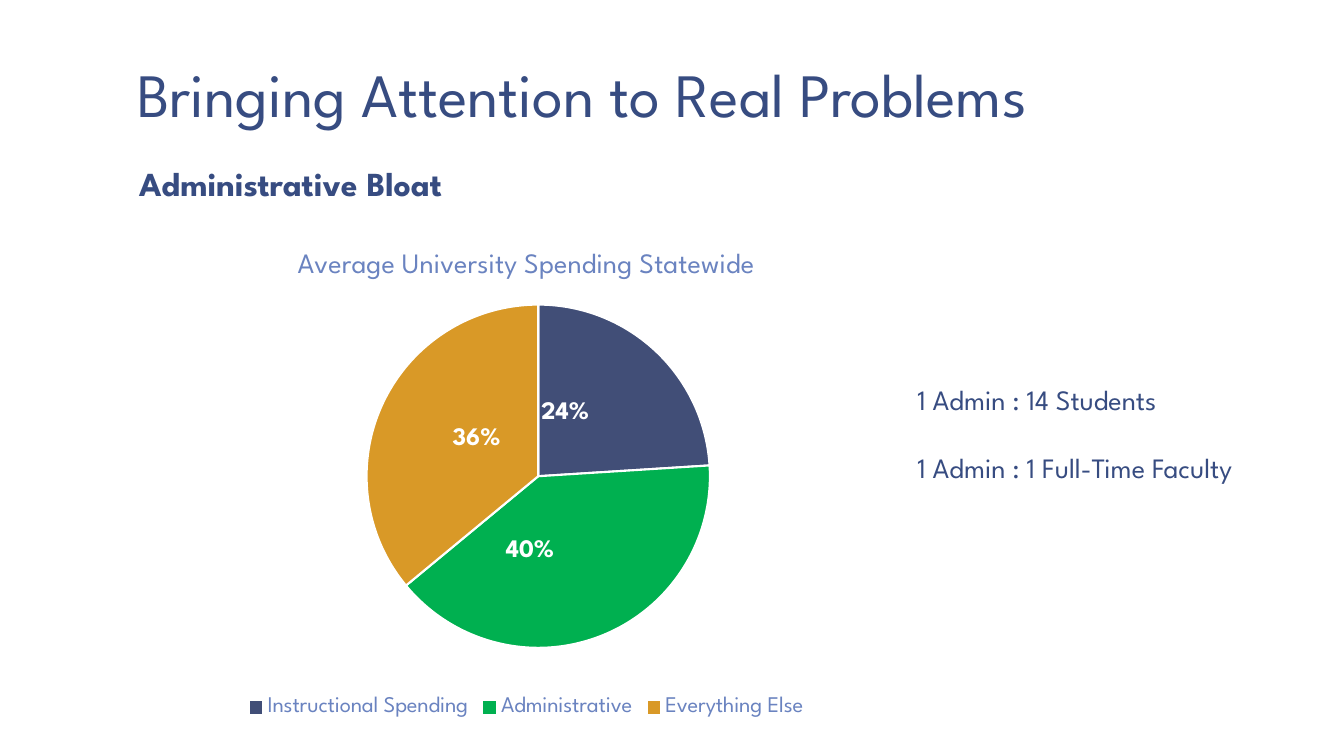
from lxml.etree import SubElement
from pptx import Presentation
from pptx.chart.data import CategoryChartData
from pptx.dml.color import RGBColor
from pptx.enum.chart import XL_CHART_TYPE, XL_LABEL_POSITION, XL_LEGEND_POSITION
from pptx.enum.text import MSO_ANCHOR, PP_ALIGN
from pptx.oxml.ns import qn
from pptx.util import Inches, Pt

FONT = "League Spartan"
COLORS = {"navy": "374C81", "soft_blue": "6A83C0", "white": "FFFFFF"}

# Category, share, slice colour, label shift as a fraction of the chart
SPENDING = [
    ("Instructional Spending", 0.24, "414E77", (-0.04, 0)),
    ("Administrative", 0.40, "00B050", (-0.05, -0.01)),
    ("Everything Else", 0.36, "D99927", (0.02, 0)),
]
RATIOS = ["1 Admin : 14 Students", "1 Admin : 1 Full-Time Faculty"]


def rgb(name):
    return RGBColor.from_string(COLORS.get(name, name))


def style(font, size, color, bold=False):
    font.name, font.size, font.bold = FONT, Pt(size), bold
    font.color.rgb = rgb(color)


def set_margins(frame):
    frame.word_wrap = True
    frame.vertical_anchor = MSO_ANCHOR.BOTTOM
    frame.margin_left = frame.margin_right = Inches(0.13)
    frame.margin_top = frame.margin_bottom = Inches(0.07)


def add_title(slide, left, top, width, height):
    title = slide.shapes.title
    title.left, title.top, title.width, title.height = left, top, width, height
    set_margins(title.text_frame)
    title.text_frame.text = "Bringing Attention to Real Problems"
    heading = title.text_frame.paragraphs[0]
    heading.alignment, heading.line_spacing = PP_ALIGN.LEFT, 0.85
    style(heading.font, 44, "navy")


def add_subtitle(slide, left, top, width, height):
    frame = slide.shapes.add_textbox(left, top, width, height).text_frame
    set_margins(frame)
    frame.text = "Administrative Bloat"
    subtitle = frame.paragraphs[0]
    subtitle.line_spacing = 0.95
    style(subtitle.font, 24, "navy", bold=True)


def add_layout(layout, **values):
    manual = SubElement(layout, qn("c:manualLayout"))
    for tag, value in values.items():
        SubElement(manual, qn(f"c:{tag}")).set("val", str(value))


def add_spending_pie(slide, left, top, width, height):
    data = CategoryChartData(number_format="0%")
    data.categories = [category for category, *_ in SPENDING]
    data.add_series("Series 1", [share for _, share, *_ in SPENDING])
    chart = slide.shapes.add_chart(
        XL_CHART_TYPE.PIE, left, top, width, height, data).chart
    style(chart.font, 10, "navy")

    # Title and legend
    chart.has_title = True
    chart.chart_title.include_in_layout = False
    chart.chart_title.text_frame.text = "Average University Spending Statewide"
    style(chart.chart_title.text_frame.paragraphs[0].font, 20, "soft_blue")
    chart.has_legend = True
    chart.legend.position = XL_LEGEND_POSITION.BOTTOM
    chart.legend.include_in_layout = False
    style(chart.legend.font, 16, "soft_blue")

    # Plot area
    plot = chart.plots[0]
    plot.vary_by_categories = True
    plot_area = chart.element.find(f".//{qn('c:plotArea')}")
    layout = plot_area.find(qn("c:layout"))
    if layout is None:
        layout = SubElement(plot_area, qn("c:layout"))
        plot_area.insert(0, layout)
    add_layout(layout, layoutTarget="inner", xMode="edge", yMode="edge",
               x=0.3, y=0.15, w=0.43, h=0.7)

    # Slices and their labels
    series = plot.series[0]
    labels = series.data_labels
    labels.show_value = True
    labels.number_format, labels.number_format_is_linked = "0%", False
    style(labels.font, 18, "white", bold=True)
    for index, (_, _, color, _) in enumerate(SPENDING):
        point = series.points[index]
        point.format.fill.solid()
        point.format.fill.fore_color.rgb = rgb(color)
        point.format.line.color.rgb = rgb("white")
        point.format.line.width = Pt(1.5)
        style(point.data_label.font, 18, "white", bold=True)
        point.data_label.position = XL_LABEL_POSITION.CENTER

    # Shift each label off its slice's centre
    slice_labels = chart.element.findall(f".//{qn('c:dLbl')}")
    for label, (_, _, _, (dx, dy)) in zip(slice_labels, SPENDING):
        layout = SubElement(label, qn("c:layout"))
        add_layout(layout, x=dx, y=dy)
        number_format = SubElement(label, qn("c:numFmt"))
        number_format.set("formatCode", "0%")
        number_format.set("sourceLinked", "0")
        label.insert(1, layout)
        label.insert(2, number_format)


def add_ratios(slide, left, top, width, height):
    frame = slide.shapes.add_textbox(left, top, width, height).text_frame
    frame.word_wrap = True
    frame.text = "\n".join(RATIOS)
    for ratio in frame.paragraphs:
        style(ratio.font, 20, "navy")
    frame.paragraphs[1].space_before = Pt(24)


def main():
    deck = Presentation()
    deck.slide_width, deck.slide_height = Inches(13.33), Inches(7.5)
    slide = deck.slides.add_slide(deck.slide_layouts.get_by_name("Title Only"))
    add_title(slide, Inches(1.23), Inches(0.33), Inches(11.11), Inches(1.03))
    add_subtitle(slide, Inches(1.25), Inches(1.54), Inches(5.44), Inches(0.56))
    add_spending_pie(slide, Inches(1.26), Inches(2.28), Inches(7.92), Inches(4.89))
    add_ratios(slide, Inches(9), Inches(3.75), Inches(4.33), Inches(1.11))
    deck.save("out.pptx")


if __name__ == "__main__":
    main()
